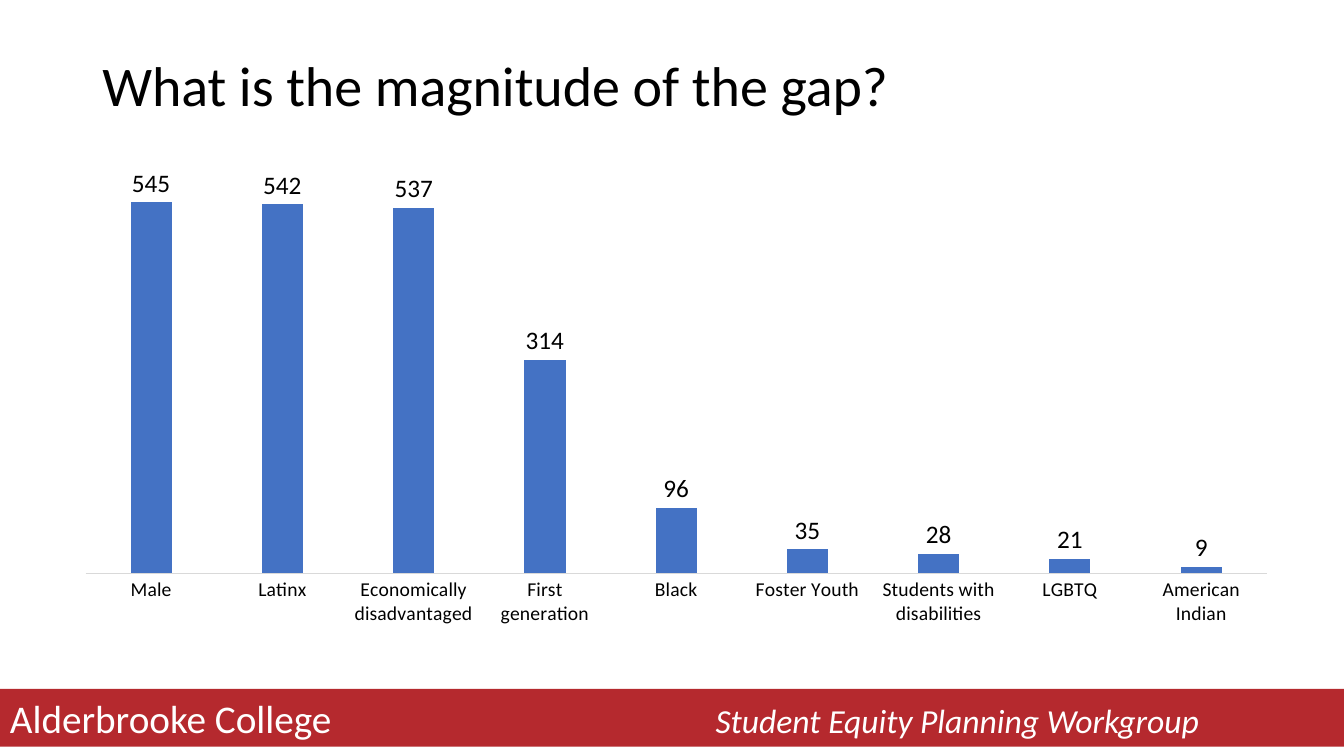
from pptx import Presentation
from pptx.chart.data import CategoryChartData
from pptx.dml.color import RGBColor
from pptx.enum.chart import XL_CHART_TYPE, XL_LABEL_POSITION, XL_TICK_LABEL_POSITION, XL_TICK_MARK
from pptx.enum.shapes import MSO_SHAPE
from pptx.enum.text import MSO_ANCHOR, PP_ALIGN
from pptx.oxml.ns import qn
from pptx.util import Pt
from lxml.etree import SubElement

SCALE = 9525
FACE = "Calibri"
HUES = {"ink": "000000", "paper": "FFFFFF", "band": "B5292E", "bar": "4472C4", "rule": "D9D9D9"}
GAPS = {
    "Male": 545,
    "Latinx": 542,
    "Economically disadvantaged": 537,
    "First generation": 314,
    "Black": 96,
    "Foster Youth": 35,
    "Students with disabilities": 28,
    "LGBTQ": 21,
    "American Indian": 9,
}


def px(*sizes):
    return [size * SCALE for size in sizes]


def hue(name):
    return RGBColor.from_string(HUES[name])


def apply(item, **values):
    for name, value in values.items():
        setattr(item, name, value)


def style(font, size, tint="ink", **more):
    apply(font, name=FACE, size=Pt(size), **more)
    font.color.rgb = hue(tint)


def paint(fill, tint):
    fill.solid()
    fill.fore_color.rgb = hue(tint)


def write(para, text, size, tint, **more):
    run = para.add_run()
    run.text = text
    style(run.font, size, tint, **more)


def add_title(slide, text, box):
    frame = slide.shapes.add_textbox(*px(*box)).text_frame
    apply(frame, word_wrap=True, vertical_anchor=MSO_ANCHOR.MIDDLE)
    write(frame.paragraphs[0], text, 40, "ink")


def add_band(slide, left, right, stop, box):
    """Draw the footer band; the right text starts at a tab stop."""
    band = slide.shapes.add_shape(MSO_SHAPE.RECTANGLE, *px(*box))
    band.shadow.inherit = False
    paint(band.fill, "band")
    band.line.fill.background()
    apply(band.text_frame, word_wrap=True, vertical_anchor=MSO_ANCHOR.MIDDLE)
    para = band.text_frame.paragraphs[0]
    para.alignment = PP_ALIGN.LEFT
    tabs = SubElement(para._p.get_or_add_pPr(), qn("a:tabLst"))
    SubElement(tabs, qn("a:tab"), pos=str(px(stop)[0]), algn="l")
    write(para, left + "\t", 28, "paper")
    write(para, right, 24, "paper", italic=True)


def add_bars(slide, values, box):
    data = CategoryChartData(number_format="0")
    data.categories = list(values)
    data.add_series("Series 1", list(values.values()))
    chart = slide.shapes.add_chart(XL_CHART_TYPE.COLUMN_CLUSTERED, *px(*box), data).chart
    apply(chart, has_legend=False, has_title=False)
    style(chart.font, 10)

    plot = chart.plots[0]
    apply(plot, gap_width=219, overlap=-27, vary_by_categories=False, has_data_labels=True)
    paint(plot.series[0].format.fill, "bar")
    apply(plot.data_labels, show_value=True, position=XL_LABEL_POSITION.OUTSIDE_END,
          number_format="0", number_format_is_linked=False)
    style(plot.data_labels.font, 18)

    axis = chart.category_axis
    apply(axis, major_tick_mark=XL_TICK_MARK.NONE, minor_tick_mark=XL_TICK_MARK.NONE,
          tick_label_position=XL_TICK_LABEL_POSITION.NEXT_TO_AXIS)
    style(axis.tick_labels.font, 14)
    axis.format.line.color.rgb = hue("rule")
    axis.format.line.width = Pt(0.75)
    apply(chart.value_axis, visible=False, has_major_gridlines=False,
          minimum_scale=0, maximum_scale=600)


def main():
    deck = Presentation()
    deck.slide_width, deck.slide_height = px(1280, 720)
    slide = deck.slides.add_slide(deck.slide_layouts[6])
    add_title(slide, "What is the magnitude of the gap?", (88, 38, 1104, 84))
    add_band(slide, "Alderbrooke College", "Student Equity Planning Workgroup", 672, (0, 656, 1280, 55))
    add_bars(slide, GAPS, (58, 148, 1172, 457))
    deck.save("out.pptx")


if __name__ == "__main__":
    main()
